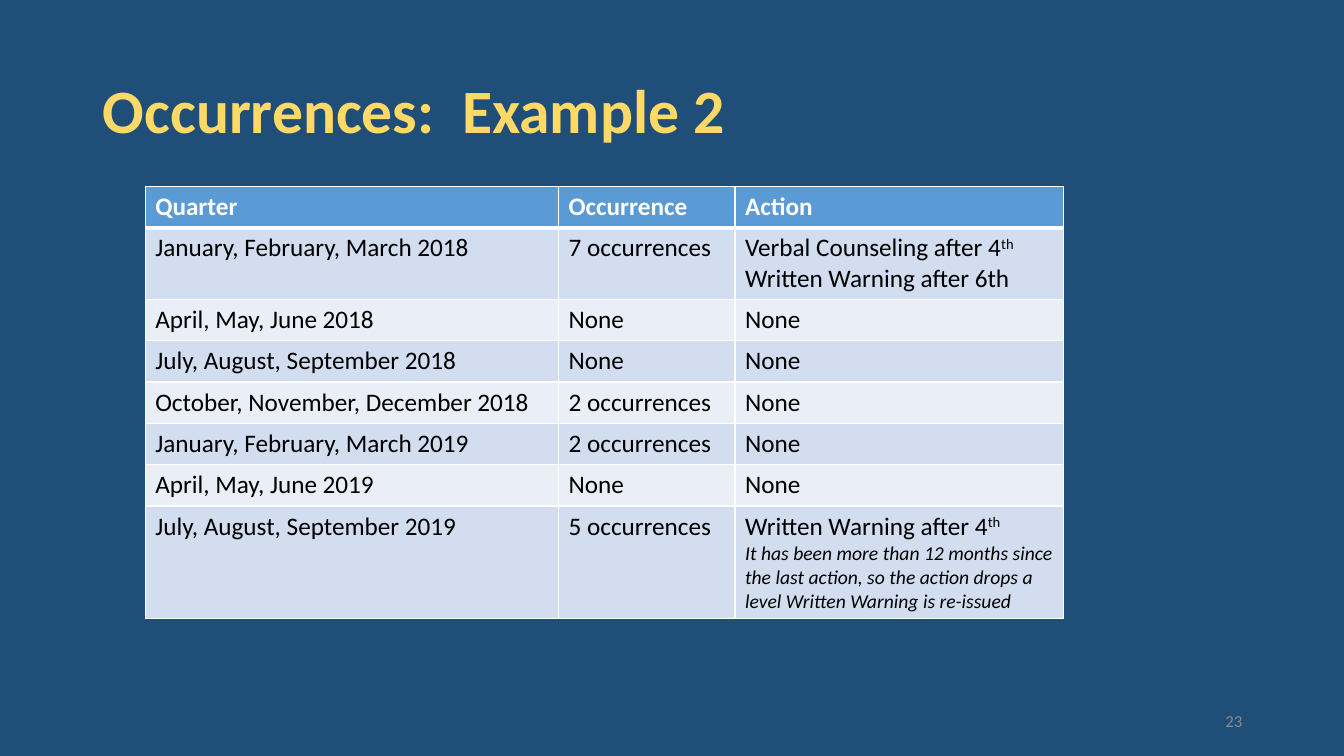
from dataclasses import dataclass

from lxml.etree import SubElement
from pptx import Presentation
from pptx.dml.color import RGBColor
from pptx.enum.text import MSO_ANCHOR, MSO_AUTO_SIZE, PP_ALIGN
from pptx.oxml.ns import qn
from pptx.util import Inches, Pt


@dataclass(frozen=True)
class Theme:
    font: str = "Calibri"
    background: str = "1F4E79"
    title: str = "FFD966"
    header: str = "5B9BD5"
    header_text: str = "FFFFFF"
    body_text: str = "000000"
    bands: tuple = ("D2DEEF", "EAEFF7")
    border: str = "FFFFFF"
    number: str = "8C8C8C"
    title_size: int = 44
    table_size: int = 18
    note_size: int = 14
    number_size: int = 12
    thin: int = 1
    thick: int = 3


THEME = Theme()

COLUMN_WIDTHS = (4.1, 1.75, 3.26)
ROW_HEIGHT = 0.41
HEADERS = ("Quarter", "Occurrence", "Action")

# A cell is a string, or a list of paragraphs made of (text, style) runs
VERBAL_THEN_WRITTEN = [
    [("Verbal Counseling after 4", "plain"), ("th", "super")],
    [("Written Warning after 6th", "plain")],
]
WRITTEN_REISSUED = [
    [("Written Warning after 4", "plain"), ("th", "super")],
    [("It has been more than 12 months since the last action, so the action "
      "drops a level Written Warning is re-issued", "note")],
]
QUARTERS = (
    ("January, February, March 2018", "7 occurrences", VERBAL_THEN_WRITTEN),
    ("April, May, June 2018", "None", "None"),
    ("July, August, September 2018", "None", "None"),
    ("October, November, December 2018", "2 occurrences", "None"),
    ("January, February, March 2019", "2 occurrences", "None"),
    ("April, May, June 2019", "None", "None"),
    ("July, August, September 2019", "5 occurrences", WRITTEN_REISSUED),
)


def add_run(p, text, size, color, bold=False, italic=False):
    r = p.add_run()
    r.text = text
    r.font.name = THEME.font
    r.font.size = Pt(size)
    r.font.bold = bold
    r.font.italic = italic
    r.font.color.rgb = RGBColor.from_string(color)
    return r


def place(shape, left, top, width, height):
    shape.left, shape.top = Inches(left), Inches(top)
    shape.width, shape.height = Inches(width), Inches(height)


def set_title(s, text):
    title = s.shapes.title
    place(title, 0.92, 0.4, 11.5, 1.45)
    tf = title.text_frame
    tf.auto_size = MSO_AUTO_SIZE.NONE
    tf.vertical_anchor = MSO_ANCHOR.MIDDLE
    p = tf.paragraphs[0]
    p.alignment = PP_ALIGN.LEFT
    p.line_spacing = 0.9
    add_run(p, text, THEME.title_size, THEME.title, bold=True)


def set_borders(cell, top, bottom):
    """Draw the four cell borders, ahead of the fill as the schema requires."""
    tcPr = cell._tc.get_or_add_tcPr()
    widths = {"lnL": THEME.thin, "lnR": THEME.thin, "lnT": top, "lnB": bottom}
    for position, (side, width) in enumerate(widths.items()):
        line = SubElement(tcPr, qn(f"a:{side}"), w=str(Pt(width)))
        fill = SubElement(line, qn("a:solidFill"))
        SubElement(fill, qn("a:srgbClr"), val=THEME.border)
        tcPr.insert(position, line)


def fill_cell(cell, content, row):
    is_header = row == 0
    color = THEME.header_text if is_header else THEME.body_text
    background = THEME.header if is_header else THEME.bands[(row - 1) % 2]
    cell.fill.solid()
    cell.fill.fore_color.rgb = RGBColor.from_string(background)
    set_borders(cell,
                top=THEME.thick if row == 1 else THEME.thin,
                bottom=THEME.thick if is_header else THEME.thin)

    paragraphs = [[(content, "plain")]] if isinstance(content, str) else content
    tf = cell.text_frame
    for i, runs in enumerate(paragraphs):
        p = tf.paragraphs[0] if i == 0 else tf.add_paragraph()
        for text, style in runs:
            is_note = style == "note"
            size = THEME.note_size if is_note else THEME.table_size
            r = add_run(p, text, size, color, bold=is_header, italic=is_note)
            if style == "super":
                r.font._element.set("baseline", "30000")


def add_quarter_table(s, left, top):
    rows = (HEADERS, *QUARTERS)
    frame = s.shapes.add_table(
        len(rows), len(HEADERS), Inches(left), Inches(top),
        Inches(sum(COLUMN_WIDTHS)), Inches(ROW_HEIGHT * len(rows)))
    table = frame.table
    for column, width in zip(table.columns, COLUMN_WIDTHS):
        column.width = Inches(width)
    for i, contents in enumerate(rows):
        table.rows[i].height = Inches(ROW_HEIGHT)
        for j, content in enumerate(contents):
            fill_cell(table.cell(i, j), content, i)


def add_slide_number(s, number):
    box = s.shapes.add_textbox(Inches(9.42), Inches(6.95), Inches(3), Inches(0.4))
    tf = box.text_frame
    tf.word_wrap = True
    tf.vertical_anchor = MSO_ANCHOR.MIDDLE
    p = tf.paragraphs[0]
    p.alignment = PP_ALIGN.RIGHT
    add_run(p, number, THEME.number_size, THEME.number)


def main():
    prs = Presentation()
    prs.slide_width, prs.slide_height = Inches(13.33), Inches(7.5)

    # Title-only slide on a solid background
    s = prs.slides.add_slide(prs.slide_layouts[5])
    s.background.fill.solid()
    s.background.fill.fore_color.rgb = RGBColor.from_string(THEME.background)

    # Content
    set_title(s, "Occurrences:  Example 2")
    add_quarter_table(s, 1.44, 1.85)
    add_slide_number(s, "23")

    prs.save("out.pptx")


if __name__ == "__main__":
    main()
